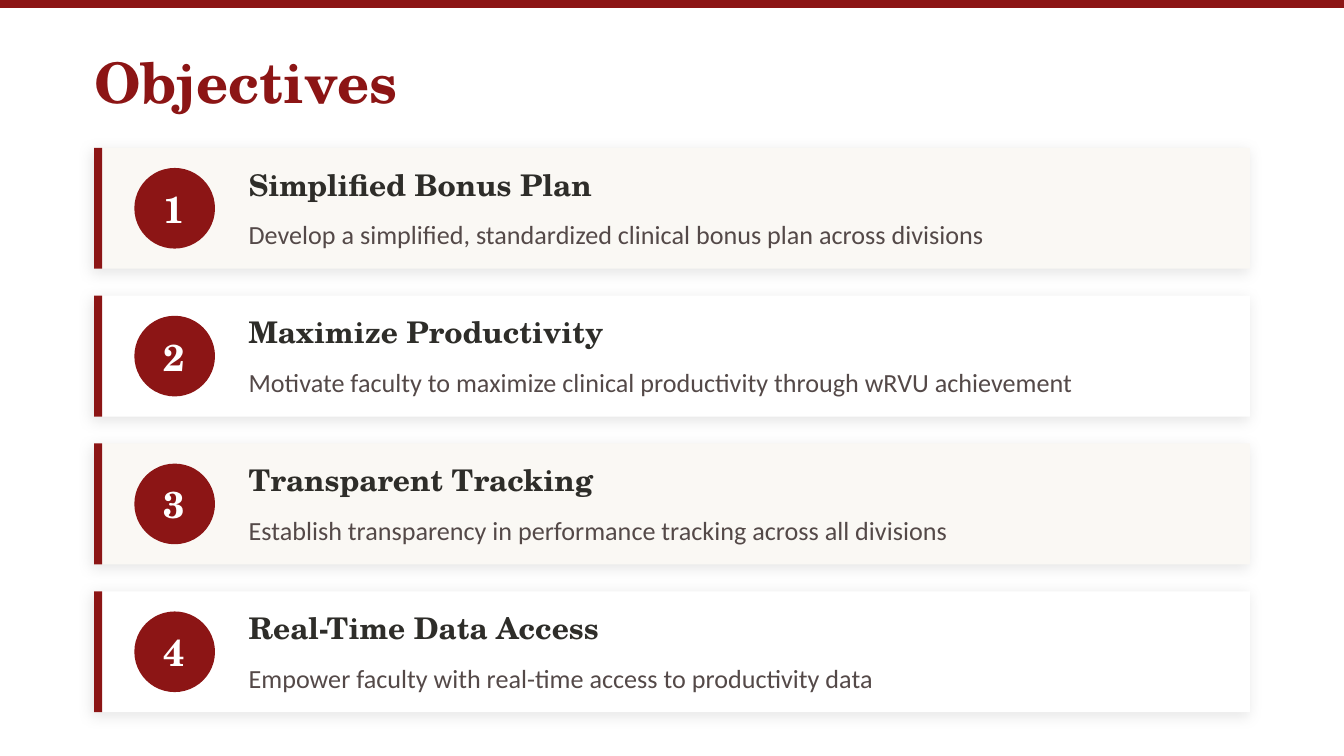
from lxml import etree
from pptx import Presentation
from pptx import util as u
from pptx.dml.color import RGBColor
from pptx.enum import shapes, text
from pptx.oxml.ns import qn

COLORS = {
    "cardinal": "8C1515",
    "cream": "FAF8F4",
    "white": "FFFFFF",
    "ink": "2E2D29",
    "muted": "544948",
    "shadow": "000000",
}
SERIF, SANS = "TeX Gyre Schola", "Calibri"

OBJECTIVES = [
    ("Simplified Bonus Plan",
     "Develop a simplified, standardized clinical bonus plan across divisions"),
    ("Maximize Productivity",
     "Motivate faculty to maximize clinical productivity through wRVU achievement"),
    ("Transparent Tracking",
     "Establish transparency in performance tracking across all divisions"),
    ("Real-Time Data Access",
     "Empower faculty with real-time access to productivity data"),
]


def write(box, words, size, color, font=SERIF, bold=True, align=text.PP_ALIGN.LEFT):
    """Put one formatted line of text in a shape, without margins."""
    frame = box.text_frame
    frame.word_wrap = True
    frame.auto_size = text.MSO_AUTO_SIZE.NONE
    frame.vertical_anchor = text.MSO_ANCHOR.MIDDLE
    frame.margin_left = frame.margin_right = 0
    frame.margin_top = frame.margin_bottom = 0
    para = frame.paragraphs[0]
    para.alignment = align
    span = para.add_run()
    span.text = words
    span.font.name = font
    span.font.size = u.Pt(size)
    span.font.bold = bold
    span.font.color.rgb = RGBColor.from_string(COLORS[color])


class ObjectivesPage:
    """House style together with the slide being built."""

    def __init__(self, deck):
        # Layout 5 is "Title Only"
        self.page = deck.slides.add_slide(deck.slide_layouts[5])

    def title(self, words, *place):
        box = self.page.shapes.title
        box.left, box.top, box.width, box.height = map(u.Inches, place)
        write(box, words, 30, "cardinal")

    def shape(self, kind, color, *place):
        box = self.page.shapes.add_shape(kind, *map(u.Inches, place))
        box.shadow.inherit = False
        box.fill.solid()
        box.fill.fore_color.rgb = RGBColor.from_string(COLORS[color])
        box.line.fill.background()
        return box

    def bar(self, color, *place):
        return self.shape(shapes.MSO_SHAPE.RECTANGLE, color, *place)

    def card(self, color, *place):
        box = self.bar(color, *place)
        # Soft shadow: 8 pt blur, 2 pt away, 135 degrees, 10 % opaque
        effects = box._element.spPr.find(qn("a:effectLst"))
        shadow = etree.SubElement(
            effects, qn("a:outerShdw"), blurRad=str(u.Pt(8)), dist=str(u.Pt(2)),
            dir=str(135 * 60000), algn="bl", rotWithShape="0")
        tint = etree.SubElement(shadow, qn("a:srgbClr"), val=COLORS["shadow"])
        etree.SubElement(tint, qn("a:alpha"), val="10000")

    def badge(self, number, *place):
        self.shape(shapes.MSO_SHAPE.OVAL, "cardinal", *place)
        self.label(str(number), place, size=20, color="white",
                   align=text.PP_ALIGN.CENTER)

    def label(self, words, place, **style):
        box = self.page.shapes.add_textbox(*map(u.Inches, place))
        write(box, words, **style)

    def objective(self, number, heading, detail, top):
        self.card("cream" if number % 2 else "white", 0.7, top, 8.6, 0.9)
        self.bar("cardinal", 0.7, top, 0.06, 0.9)
        self.badge(number, 1, top + 0.15, 0.6, 0.6)
        self.label(heading, (1.85, top + 0.08, 7.2, 0.38), size=16, color="ink")
        self.label(detail, (1.85, top + 0.47, 7.2, 0.35),
                   size=14, color="muted", font=SANS, bold=False)


def main():
    # Widescreen page, 16:9
    deck = Presentation()
    deck.slide_width, deck.slide_height = u.Inches(10), u.Inches(10 * 9 / 16)
    page = ObjectivesPage(deck)

    # Top band and title
    page.bar("cardinal", 0, 0, 10, 0.06)
    page.title("Objectives", 0.7, 0.3, 8.6, 0.6)

    # Numbered cards at an even pitch
    for number, (heading, detail) in enumerate(OBJECTIVES, start=1):
        page.objective(number, heading, detail, top=1.1 * number)

    deck.save("out.pptx")


if __name__ == "__main__":
    main()
